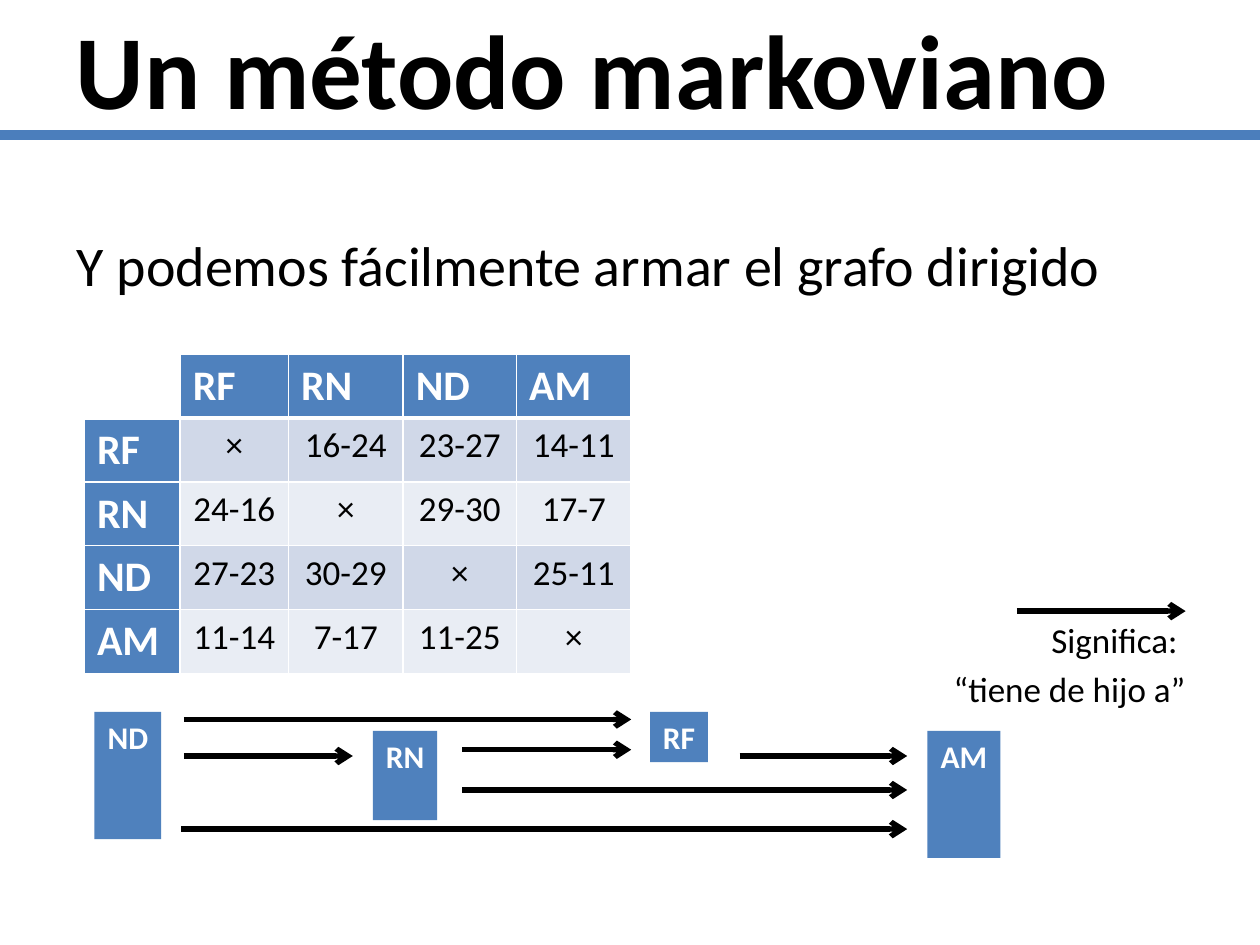
from pptx import Presentation
from pptx.dml.color import RGBColor as RGB
from pptx.enum.shapes import MSO_CONNECTOR as Conn, MSO_SHAPE as Shape
from pptx.enum.text import MSO_ANCHOR as Anchor, MSO_AUTO_SIZE as Fit, PP_ALIGN as Align
from pptx.oxml.ns import qn
from pptx.util import Inches, Pt
from lxml.etree import SubElement as Sub

COLORS = {"blue": "4F81BD", "rule": "4B7EBC", "odd": "D0D8E8",
          "even": "E9EDF4", "white": "FFFFFF", "black": "000000"}


def write(para, text, size=20, color="black", bold=False, align=Align.LEFT, before=0):
    run = para.add_run()
    run.text = text
    run.font.name = "Calibri"
    run.font.size = Pt(size)
    run.font.bold = bold
    run.font.color.rgb = RGB.from_string(COLORS[color])
    para.alignment = align
    para.space_before = Pt(before)


def draw_line(x1, x2, y, color="black", width=3, arrow=True):
    line = slide.shapes.add_connector(
        Conn.STRAIGHT, Inches(x1), Inches(y), Inches(x2), Inches(y))
    line.line.color.rgb = RGB.from_string(COLORS[color])
    line.line.width = Pt(width)
    if arrow:
        Sub(line.line._get_or_add_ln(), qn("a:tailEnd"), type="arrow")
    Sub(line._element.spPr, qn("a:effectLst"))


prs = Presentation()
prs.slide_width, prs.slide_height = Inches(10), Inches(7.5)
slide = prs.slides.add_slide(prs.slide_layouts[1])
title, body = slide.placeholders

# Title and rule
title.left, title.top, title.width, title.height = map(Inches, (0.5, 0, 9, 1.07))
title.text_frame.auto_size = Fit.NONE
title.text_frame.vertical_anchor = Anchor.MIDDLE
write(title.text_frame.paragraphs[0], "Un método markoviano", size=60, bold=True)
draw_line(0, 10, 1.07, color="rule", width=6, arrow=False)

# Body: statement, then the key to the arrows
body.left, body.top, body.width, body.height = map(Inches, (0.51, 1.78, 9, 4.95))
frame = body.text_frame
frame.auto_size = Fit.NONE
lines = [("Y podemos fácilmente armar el grafo dirigido", 32, Align.LEFT, 0),
         ("Significa: ", 20, Align.RIGHT, 183),
         ("“tiene de hijo a”", 20, Align.RIGHT, 4)]
for i, (text, size, align, before) in enumerate(lines):
    para = frame.add_paragraph() if i else frame.paragraphs[0]
    write(para, text, size=size, align=align, before=before)
    props = para._p.get_or_add_pPr()
    props.set("marL", "0")
    props.set("indent", "0")
    Sub(props, qn("a:buNone"))

# Table of pairwise counts
rows = [["", "RF", "RN", "ND", "AM"],
        ["RF", "×", "16-24", "23-27", "14-11"],
        ["RN", "24-16", "×", "29-30", "17-7"],
        ["ND", "27-23", "30-29", "×", "25-11"],
        ["AM", "11-14", "7-17", "11-25", "×"]]
widths = [0.76, 0.86, 0.91, 0.9, 0.91]
table = slide.shapes.add_table(5, 5, Inches(0.67), Inches(2.81),
                               Inches(sum(widths)), Inches(2.5)).table
for col, width in zip(table.columns, widths):
    col.width = Inches(width)
for r, row in enumerate(rows):
    for c, text in enumerate(row):
        cell = table.cell(r, c)
        props = cell._tc.get_or_add_tcPr()
        for side in "LRTB":
            thick = (side == "B" and r == 0) or (side == "T" and r == 1)
            edge = Sub(props, qn(f"a:ln{side}"), w=str(Pt(3 if thick else 1)))
            Sub(Sub(edge, qn("a:solidFill")), qn("a:srgbClr"), val=COLORS["white"])
        if not text:
            cell.fill.background()
            continue
        head = r == 0 or c == 0
        fill = "blue" if head else "odd" if r % 2 else "even"
        cell.fill.solid()
        cell.fill.fore_color.rgb = RGB.from_string(COLORS[fill])
        write(cell.text_frame.paragraphs[0], text, size=24 if head else 20,
              color="white" if head else "black", bold=head,
              align=Align.LEFT if head else Align.CENTER)

# Graph nodes
nodes = [("ND", 0.75, 5.65, 0.53, 1.01), ("RN", 2.96, 5.8, 0.51, 0.71),
         ("RF", 5.16, 5.65, 0.46, 0.4), ("AM", 7.36, 5.8, 0.58, 1.01)]
for name, *place in nodes:
    node = slide.shapes.add_shape(Shape.RECTANGLE, *map(Inches, place))
    node.shadow.inherit = False
    node.fill.solid()
    node.fill.fore_color.rgb = RGB.from_string(COLORS["blue"])
    node.line.fill.background()
    node.text_frame.word_wrap = False
    node.text_frame.vertical_anchor = Anchor.TOP
    write(node.text_frame.paragraphs[0], name, size=18, color="white",
          bold=True, align=Align.CENTER)

# Graph arrows, and the one in the key
arrows = [(1.46, 2.8, 6), (3.67, 5.01, 5.95), (5.87, 7.2, 6), (1.46, 5.01, 5.71),
          (1.44, 7.2, 6.58), (3.67, 7.2, 6.27), (8.07, 9.41, 4.85)]
for start, end, y in arrows:
    draw_line(start, end, y)

prs.save("out.pptx")
